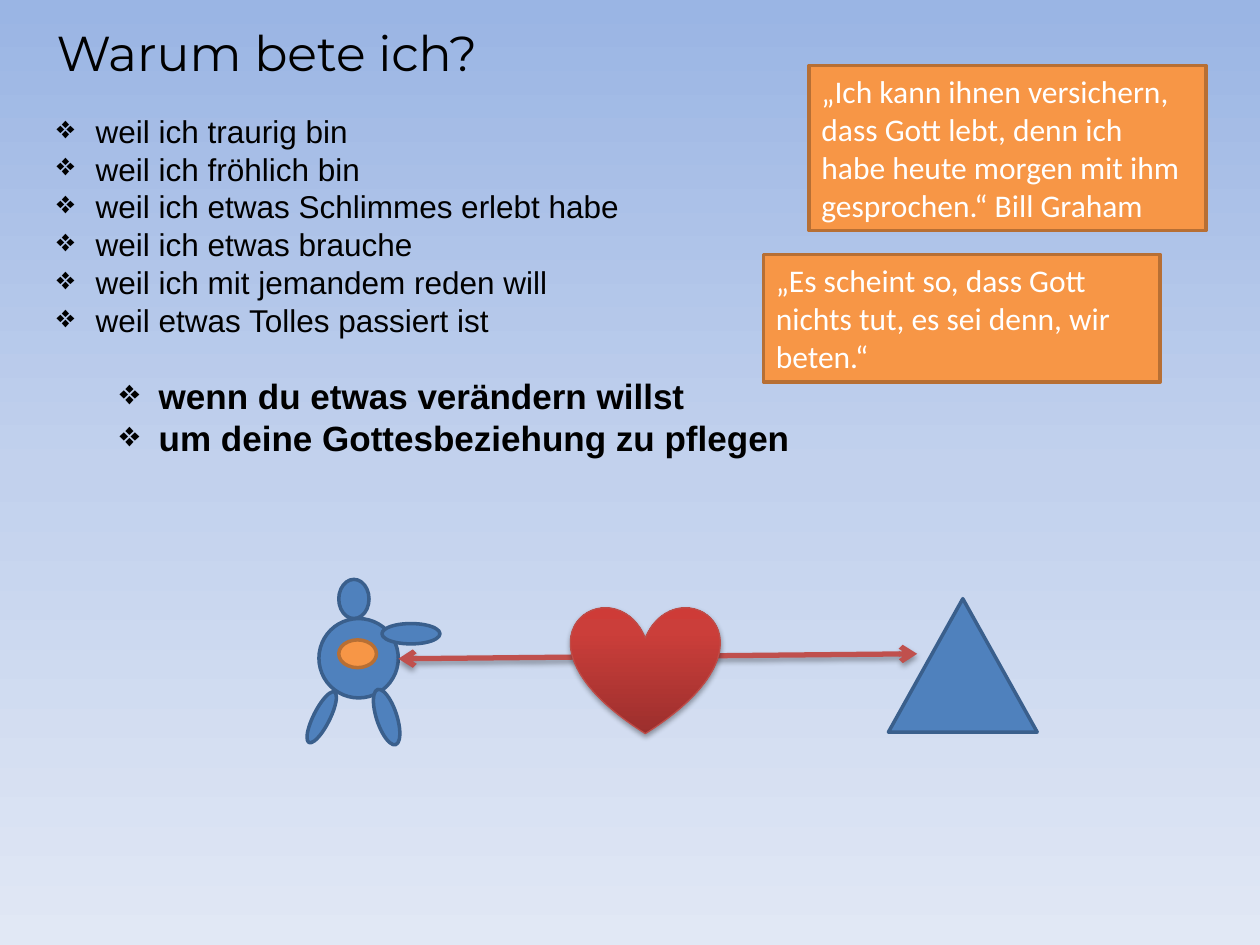
import pptx
import pptx.dml.color
import pptx.enum.shapes
import pptx.enum.text
import pptx.oxml
import pptx.oxml.ns
import pptx.util
from lxml import etree

Cm, Pt = pptx.util.Cm, pptx.util.Pt
qn = pptx.oxml.ns.qn
SHAPE = pptx.enum.shapes.MSO_SHAPE

BLUE = ("4F81BD", "3A5F8C")
ORANGE = ("F79646", "B76F34")
BODY = {"name": "Arial", "size": Pt(18), "bold": False}
STRONG = {"name": "Arial", "size": Pt(20), "bold": True}

REASONS = [
    "weil ich traurig bin",
    "weil ich fröhlich bin",
    "weil ich etwas Schlimmes erlebt habe",
    "weil ich etwas brauche",
    "weil ich mit jemandem reden will",
    "weil etwas Tolles passiert ist",
]
MAIN_REASONS = [
    "wenn du etwas verändern willst",
    "um deine Gottesbeziehung zu pflegen",
]
QUOTES = [
    ((16.31, 1.32, 8, 3.33),
     "„Ich kann ihnen versichern, dass Gott lebt, denn ich habe heute morgen "
     "mit ihm gesprochen.“ Bill Graham"),
    ((15.39, 5.13, 8, 2.57),
     "„Es scheint so, dass Gott nichts tut, es sei denn, wir beten.“"),
]
# Parts of the praying figure: box, rotation, colours
FIGURE = [
    ((6.83, 11.68, 0.61, 0.79), 0, BLUE),
    ((6.43, 12.47, 1.6, 1.6), 0, BLUE),
    ((7.59, 13.87, 0.41, 1.17), 341.9, BLUE),
    ((6.83, 12.9, 0.76, 0.56), 0, ORANGE),
    ((6.32, 13.89, 0.33, 1.14), 26.8, BLUE),
    ((8.08, 12.19, 0.41, 1.17), 270, BLUE),
]


def rgb(value):
    return pptx.dml.color.RGBColor.from_string(value)


def add_xml(parent, tag, **attrs):
    return etree.SubElement(parent, qn(tag), attrs)


def set_gradient(fill, element, stops, angle):
    """Fill with (percent, colour) stops; angle runs counter-clockwise."""
    fill.gradient()
    fill.gradient_angle = angle
    gs_list = next(element.iter(qn("a:gsLst")))
    for gs in list(gs_list):
        gs_list.remove(gs)
    for percent, color in stops:
        gs = add_xml(gs_list, "a:gs", pos=str(percent * 1000))
        add_xml(gs, "a:srgbClr", val=color)


def add_shadow(element):
    sp_pr = element.find(qn("p:spPr"))
    effects = sp_pr.find(qn("a:effectLst"))
    if effects is None:
        effects = add_xml(sp_pr, "a:effectLst")
    shadow = add_xml(effects, "a:outerShdw", blurRad=str(Pt(3.1)),
                     dist=str(Pt(1.8)), dir="5400000", rotWithShape="0")
    color = add_xml(shadow, "a:srgbClr", val="000000")
    add_xml(color, "a:alpha", val="35000")


def add_run(p, text, color, font):
    r = p.add_run()
    r.text = text
    r.font.color.rgb = rgb(color)
    for name, value in font.items():
        setattr(r.font, name, value)


def fit_text(tf):
    tf.word_wrap = True
    tf.auto_size = pptx.enum.text.MSO_AUTO_SIZE.SHAPE_TO_FIT_TEXT


def add_textbox(s, box):
    tf = s.shapes.add_textbox(*map(Cm, box)).text_frame
    fit_text(tf)
    return tf


def add_bullet(p, text, level, font):
    p.level = level
    p_pr = p._p.get_or_add_pPr()
    p_pr.set("marL", str(Cm(0.79 + 1.27 * level)))
    p_pr.set("indent", str(Cm(-0.79)))
    add_xml(p_pr, "a:buChar", char="❖")
    add_run(p, text, "000000", font)


def add_reasons(s):
    tf = add_textbox(s, (0.89, 2.13, 24.21, 8.81))
    items = [(text, 0, BODY) for text in REASONS]
    items += [(text, 1, STRONG) for text in MAIN_REASONS]
    for i, item in enumerate(items):
        p = tf.add_paragraph() if i else tf.paragraphs[0]
        add_bullet(p, *item)
    tf.paragraphs[len(REASONS)].space_before = Pt(20.7)


def add_shape(s, kind, box, colors, rotation=0, width=2):
    sp = s.shapes.add_shape(kind, *map(Cm, box))
    sp.shadow.inherit = False
    fill, line = colors
    sp.fill.solid()
    sp.fill.fore_color.rgb = rgb(fill)
    sp.line.color.rgb = rgb(line)
    sp.line.width = Pt(width)
    sp.rotation = rotation
    return sp


def add_quote(s, box, text):
    tf = add_shape(s, SHAPE.RECTANGLE, box, ORANGE).text_frame
    fit_text(tf)
    p = tf.paragraphs[0]
    p.alignment = pptx.enum.text.PP_ALIGN.LEFT
    add_run(p, text, "FFFFFF", {"name": "Calibri", "size": Pt(18)})


def add_double_arrow(s, points):
    line = s.shapes.add_connector(
        pptx.enum.shapes.MSO_CONNECTOR.STRAIGHT, *map(Cm, points))
    line.line.color.rgb = rgb("C0504D")
    line.line.width = Pt(3)
    ln = next(line.element.iter(qn("a:ln")))
    for end in ("a:headEnd", "a:tailEnd"):
        add_xml(ln, end, type="arrow")
    add_shadow(line.element)


def add_heart(s):
    heart = add_shape(s, SHAPE.HEART, (11.51, 12.22, 3, 2.57),
                      ("CB3E3A", "BF4C48"), width=0.75)
    set_gradient(heart.fill, heart.element,
                 [(0, "9C2F2D"), (80, "CB3E3A"), (100, "CE3B37")], 90)
    add_shadow(heart.element)


def main():
    prs = pptx.Presentation()
    prs.slide_width, prs.slide_height = Cm(25.4), Cm(19.05)
    s = prs.slides.add_slide(prs.slide_layouts[6])
    set_gradient(s.background.fill, s.element,
                 [(0, "9AB5E4"), (50, "C2D1ED"), (100, "E1E8F5")], 270)

    title = add_textbox(s, (0.89, 0.33, 23.39, 1.45))
    add_run(title.paragraphs[0], "Warum bete ich?", "000000",
            {"name": "Montserrat", "size": Pt(28)})
    add_reasons(s)
    for box, text in QUOTES:
        add_quote(s, box, text)

    for box, rotation, colors in FIGURE:
        add_shape(s, SHAPE.OVAL, box, colors, rotation)
    add_shape(s, SHAPE.ISOSCELES_TRIANGLE, (17.91, 12.07, 3, 2.69), BLUE)
    add_double_arrow(s, (8.03, 13.28, 18.49, 13.18))
    add_heart(s)
    prs.save("out.pptx")


if __name__ == "__main__":
    main()
